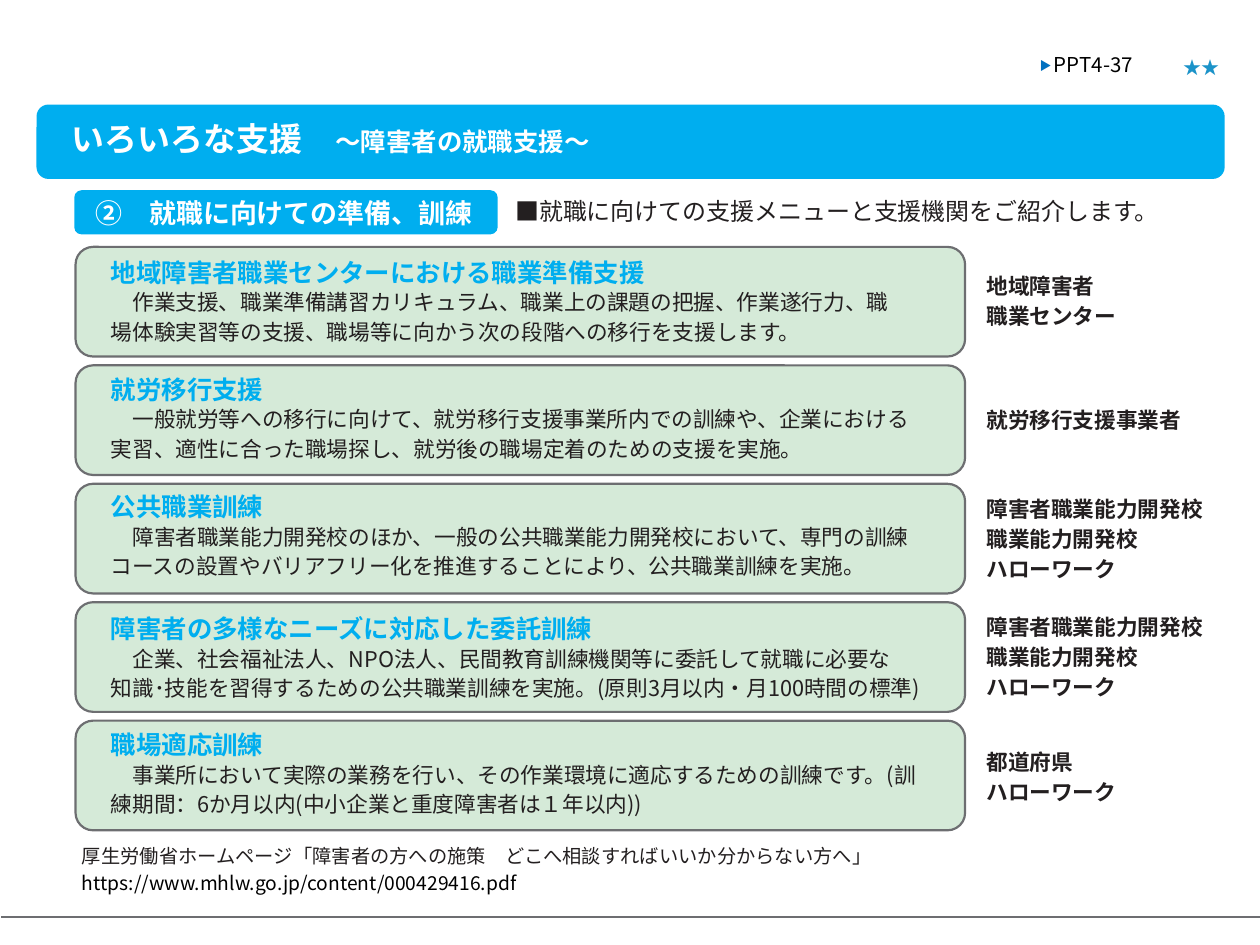
from dataclasses import dataclass

from lxml import etree
from pptx import Presentation
from pptx.dml.color import RGBColor
from pptx.enum.shapes import MSO_CONNECTOR, MSO_SHAPE
from pptx.enum.text import MSO_ANCHOR, MSO_AUTO_SIZE, PP_ALIGN
from pptx.oxml.ns import qn
from pptx.util import Inches, Pt

ROUND = MSO_SHAPE.ROUNDED_RECTANGLE
STRAIGHT = MSO_CONNECTOR.STRAIGHT
TOP = MSO_ANCHOR.TOP
LEFT = PP_ALIGN.LEFT
NO_FIT = MSO_AUTO_SIZE.NONE


@dataclass(frozen=True)
class Theme:
    font: str = "Noto Sans CJK JP"
    blue: str = "00AEEF"
    green: str = "D5EAD8"
    gray: str = "6D6E71"
    ink: str = "231F20"
    black: str = "000000"
    white: str = "FFFFFF"
    arrow: str = "0070C0"
    star: str = "1B93C9"
    title: float = 18.8
    step: float = 15.4
    head: float = 14.5
    lead: float = 13.7
    body: float = 12.4
    page: float = 11.7
    note: float = 11
    mark: float = 10.3
    line: float = 1.25


THEME = Theme()

CARD_TOP, CARD_STEP = 1.96, 0.94
CARDS = [
    (2.03, "地域障害者職業センターにおける職業準備支援",
     "　作業支援、職業準備講習カリキュラム、職業上の課題の把握、作業遂行力、職",
     "場体験実習等の支援、職場等に向かう次の段階への移行を支援します。",
     2.12, ["地域障害者\n職業センター"]),
    (2.96, "就労移行支援",
     "　一般就労等への移行に向けて、就労移行支援事業所内での訓練や、企業における",
     "実習、適性に合った職場探し、就労後の職場定着のための支援を実施。",
     3.22, ["就労移行支援事業者"]),
    (3.89, "公共職業訓練",
     "　障害者職業能力開発校のほか、一般の公共職業能力開発校において、専門の訓練",
     "コースの設置やバリアフリー化を推進することにより、公共職業訓練を実施。",
     3.89, ["障害者職業能力開発校\n職業能力開発校", "ハローワーク"]),
    (4.86, "障害者の多様なニーズに対応した委託訓練",
     "　企業、社会福祉法人、NPO法人、民間教育訓練機関等に委託して就職に必要な",
     "知識･技能を習得するための公共職業訓練を実施。(原則3月以内・月100時間の標準)",
     4.83, ["障害者職業能力開発校\n職業能力開発校", "ハローワーク"]),
    (5.78, "職場適応訓練",
     "　事業所において実際の業務を行い、その作業環境に適応するための訓練です。(訓",
     "練期間：6か月以内(中小企業と重度障害者は１年以内))",
     5.93, ["都道府県", "ハローワーク"]),
]


def color(code):
    return RGBColor.from_string(code)


def write(frame, text, size=THEME.body, tint=THEME.ink, bold=False,
          before=0, lines=None, lift=0, join=False):
    para = frame.paragraphs[-1]
    if para.runs and not join:
        para = frame.add_paragraph()
    if not join:
        para.alignment = LEFT
        para.space_before = Pt(before)
        if lines:
            para.line_spacing = lines
    for index, part in enumerate(text.split("\n")):
        if index:
            para.add_line_break()
        run = para.add_run()
        run.text = part
        font = run.font
        font.size, font.bold, font.name = Pt(size), bold, THEME.font
        font.color.rgb = color(tint)
        props = run._r.get_or_add_rPr()
        etree.SubElement(props, qn("a:ea")).set("typeface", THEME.font)
        if lift:
            props.set("baseline", str(lift * 1000))


def setup(frame, wrap=True):
    frame.word_wrap = wrap
    frame.auto_size = NO_FIT
    frame.vertical_anchor = TOP
    frame.margin_left = frame.margin_top = Inches(0.01)
    frame.margin_right = frame.margin_bottom = 0
    return frame


def box(slide, left, top, width, height, wrap=True):
    shape = slide.shapes.add_textbox(
        Inches(left), Inches(top), Inches(width), Inches(height))
    return setup(shape.text_frame, wrap)


def panel(slide, left, top, width, height, fill, edge=None):
    shape = slide.shapes.add_shape(
        ROUND, Inches(left), Inches(top), Inches(width), Inches(height))
    shape.adjustments[0] = 0.16
    shape.shadow.inherit = False
    shape.fill.solid()
    shape.fill.fore_color.rgb = color(fill)
    if edge:
        shape.line.color.rgb = color(edge)
        shape.line.width = Pt(THEME.line)
    else:
        shape.line.fill.background()


def rule(slide, left, right, top):
    line = slide.shapes.add_connector(
        STRAIGHT, Inches(left), Inches(top), Inches(right), Inches(top))
    line.line.color.rgb = color(THEME.gray)
    line.line.width = Pt(THEME.line)
    etree.SubElement(line.element.spPr, qn("a:effectLst"))


def header(slide):
    panel(slide, 0.29, 0.83, 9.43, 0.59, THEME.blue)
    title = slide.shapes.title
    title.left, title.top = Inches(0.56), Inches(0.93)
    title.width, title.height = Inches(5.52), Inches(0.33)
    title.element.getparent().append(title.element)
    frame = setup(title.text_frame)
    write(frame, "いろいろな支援　", size=THEME.title, tint=THEME.white, bold=True)
    write(frame, "～障害者の就職支援～", size=THEME.head, tint=THEME.white,
          bold=True, join=True)

    page = box(slide, 8.24, 0.4, 0.99, 0.21)
    write(page, "▶ ", size=THEME.page, tint=THEME.arrow, lift=9)
    write(page, "PPT4-37", size=THEME.page, tint=THEME.black, join=True)
    write(box(slide, 9.38, 0.44, 0.4, 0.2, wrap=False), "★★",
          size=THEME.mark, tint=THEME.star)


def intro(slide):
    panel(slide, 0.59, 1.51, 3.36, 0.35, THEME.blue)
    write(box(slide, 0.75, 1.55, 3.2, 0.27), "②　就職に向けての準備、訓練",
          size=THEME.step, tint=THEME.white, bold=True)
    write(box(slide, 4.08, 1.55, 5.57, 0.24),
          "■就職に向けての支援メニューと支援機関をご紹介します。", size=THEME.lead)


def card(slide, index, top, head, first, second, side, names):
    panel(slide, 0.6, CARD_TOP + index * CARD_STEP, 7.06, 0.87,
          THEME.green, THEME.gray)
    frame = box(slide, 0.87, top, 6.95, 0.72)
    write(frame, head, size=THEME.head, tint=THEME.blue, bold=True)
    write(frame, first, before=0.9)
    write(frame, second, before=2.1)
    label = box(slide, 7.82, side, 2.03, 0.24 * (1 + "".join(names).count("\n")
                                                 + len(names) - 1))
    for name in names:
        write(label, name, bold=True, before=2.3 if name != names[0] else 0,
              lines=1.16 if "\n" in name else None)


def footer(slide):
    frame = box(slide, 0.64, 6.69, 7.28, 0.41)
    write(frame, "厚生労働省ホームページ「障害者の方への施策　どこへ相談すればいいか分からない方へ」",
          size=THEME.note)
    write(frame, "https://www.mhlw.go.jp/content/000429416.pdf",
          size=THEME.note, tint=THEME.black, before=2.2)
    rule(slide, 0.01, 10, 7.28)


def main():
    deck = Presentation()
    deck.slide_width, deck.slide_height = Inches(10), Inches(7.5)
    slide = deck.slides.add_slide(deck.slide_layouts[5])
    header(slide)
    intro(slide)
    for index, item in enumerate(CARDS):
        card(slide, index, *item)
    footer(slide)
    deck.save("out.pptx")


if __name__ == "__main__":
    main()
